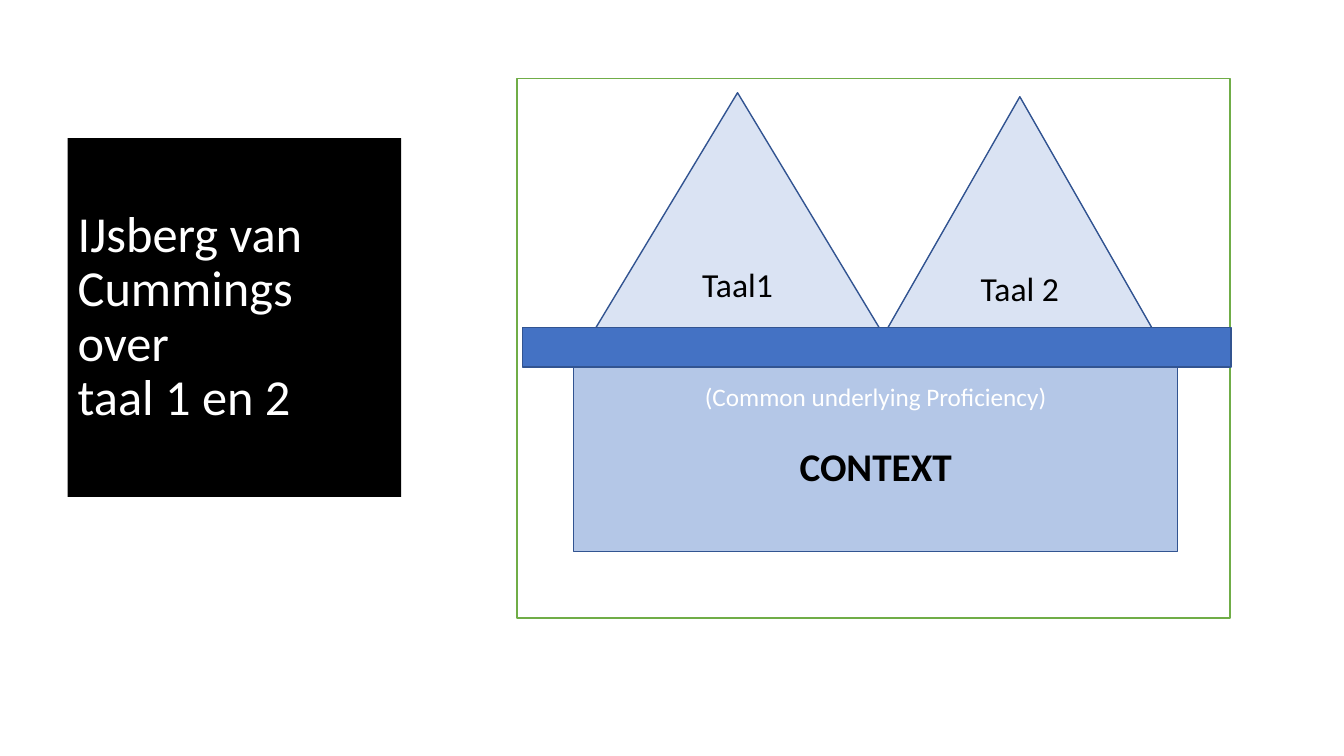
"""Build a slide showing the iceberg model of two languages."""
from dataclasses import dataclass

from pptx import Presentation, util as u
from pptx.dml.color import RGBColor
from pptx.enum import shapes, text

TITLE = "IJsberg van Cummings over \vtaal 1 en 2"
PEAKS = [("Taal1", 5.79, 0.92, 3.05), ("Taal 2", 8.67, 0.96, 2.89)]
PROFICIENCY = "(Common underlying Proficiency)"
CONTEXT = "CONTEXT"

WIDTH, HEIGHT = 13.33, 7.5
TITLE_BOX = (0.67, 1.37, 3.31, 3.56)
FRAME_BOX = (5.13, 0.78, 7.07, 5.35)
PEAK_HEIGHT = 2.53
BASE_BOX = (5.69, 3.49, 5.99, 1.98)
WATER_BOX = (5.18, 3.25, 7.03, 0.39)
BASE_INSET = 0.29


@dataclass(frozen=True)
class Theme:
    """Colours and type sizes."""
    font: str = "Calibri"
    black: str = "000000"
    white: str = "FFFFFF"
    frame: str = "70AD47"
    outline: str = "325491"
    peak: str = "DAE3F3"
    base: str = "B4C7E7"
    water: str = "4472C4"
    title: int = 36
    label: int = 24
    note: int = 18
    context: int = 28
    gap: int = 22


T = Theme()


def place(s, box):
    s.left, s.top, s.width, s.height = (u.Inches(v) for v in box)


def paint(s, fill):
    s.fill.solid()
    s.fill.fore_color.rgb = RGBColor.from_string(fill)


def write(p, words, *, size, color=T.black, bold=False,
          align=text.PP_ALIGN.CENTER, before=0, spacing=1.0):
    p.text = words
    p.alignment = align
    p.space_before = u.Pt(before)
    p.line_spacing = spacing
    for r in p.runs:
        r.font.name = T.font
        r.font.size = u.Pt(size)
        r.font.bold = bold
        r.font.color.rgb = RGBColor.from_string(color)


def add_part(slide, kind, box, fill, line=T.outline):
    s = slide.shapes.add_shape(kind, *(u.Inches(v) for v in box))
    s.shadow.inherit = False
    paint(s, fill)
    s.line.color.rgb = RGBColor.from_string(line)
    s.line.width = u.Pt(1)
    s.text_frame.vertical_anchor = text.MSO_ANCHOR.MIDDLE
    return s


def add_title(slide):
    s = slide.shapes.title
    place(s, TITLE_BOX)
    paint(s, T.black)
    tf = s.text_frame
    tf.word_wrap = True
    tf.auto_size = text.MSO_AUTO_SIZE.NONE
    tf.vertical_anchor = text.MSO_ANCHOR.MIDDLE
    write(tf.paragraphs[0], TITLE, size=T.title, color=T.white,
          align=text.PP_ALIGN.LEFT, spacing=0.9)


def add_iceberg(slide):
    rect = shapes.MSO_SHAPE.RECTANGLE
    add_part(slide, rect, FRAME_BOX, T.white, T.frame)
    for name, left, top, width in PEAKS:
        s = add_part(slide, shapes.MSO_SHAPE.ISOSCELES_TRIANGLE,
                     (left, top, width, PEAK_HEIGHT), T.peak)
        write(s.text_frame.paragraphs[0], name, size=T.label)

    tf = add_part(slide, rect, BASE_BOX, T.base).text_frame
    tf.vertical_anchor = text.MSO_ANCHOR.TOP
    tf.margin_top = u.Inches(BASE_INSET)
    write(tf.paragraphs[0], PROFICIENCY, size=T.note, color=T.white)
    write(tf.add_paragraph(), CONTEXT, size=T.context, bold=True, before=T.gap)
    add_part(slide, rect, WATER_BOX, T.water)


def main():
    prs = Presentation()
    prs.slide_width, prs.slide_height = u.Inches(WIDTH), u.Inches(HEIGHT)
    slide = prs.slides.add_slide(prs.slide_layouts.get_by_name("Title Only"))
    add_title(slide)
    add_iceberg(slide)
    prs.save("out.pptx")


if __name__ == "__main__":
    main()
